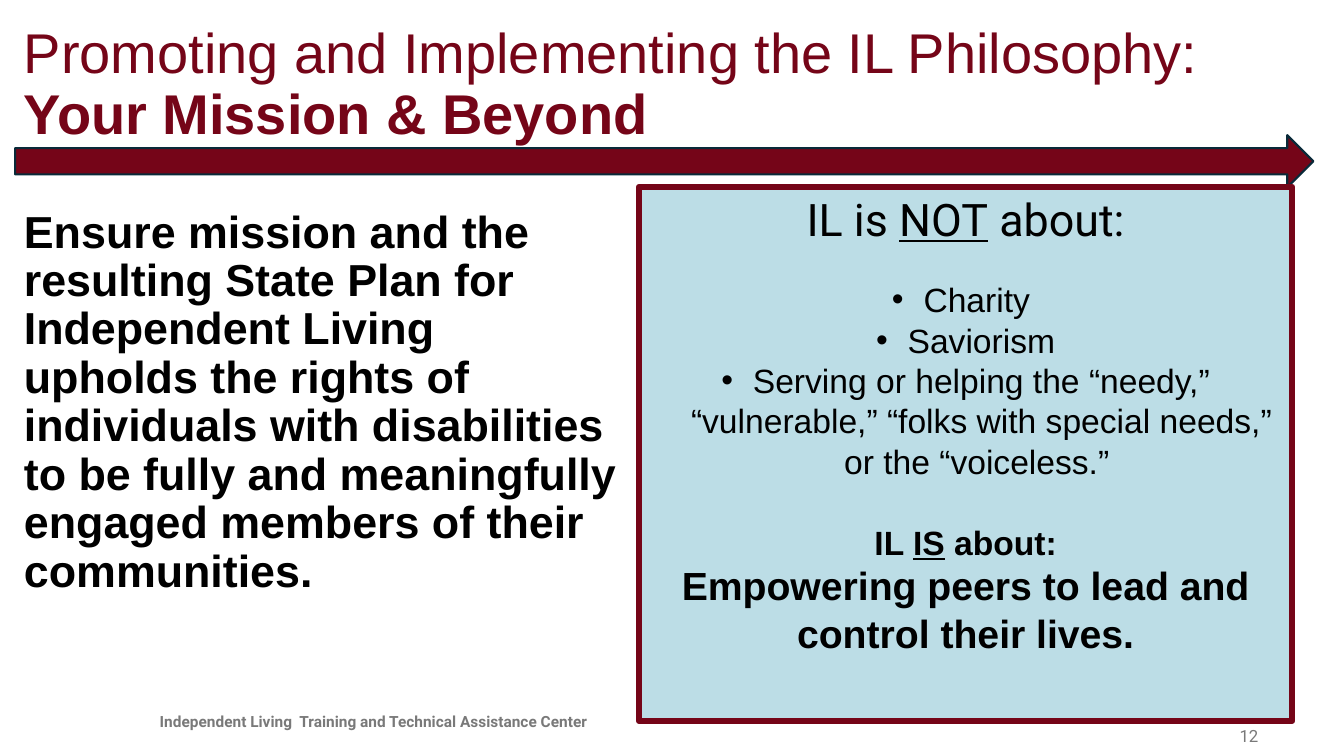
from lxml.etree import SubElement
from pptx import Presentation
from pptx.dml.color import RGBColor
from pptx.enum.shapes import MSO_SHAPE
from pptx.enum.text import MSO_ANCHOR, PP_ALIGN
from pptx.oxml.ns import qn
from pptx.util import Pt

COLORS = {
    "maroon": "750518",
    "navy": "092A39",
    "sky": "BCDDE6",
    "gray": "797979",
    "black": "000000",
}


def rgb(name):
    return RGBColor.from_string(COLORS[name])


def add_run(p, text, size=24, font="Arial", color="black", bold=False, underline=False):
    r = p.add_run()
    r.text = text
    r.font.size = Pt(size)
    r.font.name = font
    r.font.color.rgb = rgb(color)
    r.font.bold = bold
    r.font.underline = underline


class SlideBuilder:
    def __init__(self, prs):
        self.s = prs.slides.add_slide(prs.slide_layouts[6])

    def text_box(self, x, y, w, h, anchor=MSO_ANCHOR.TOP):
        tf = self.s.shapes.add_textbox(Pt(x), Pt(y), Pt(w), Pt(h)).text_frame
        tf.word_wrap = True
        tf.vertical_anchor = anchor
        return tf

    def shape(self, kind, x, y, w, h, fill, line, line_width):
        sp = self.s.shapes.add_shape(kind, Pt(x), Pt(y), Pt(w), Pt(h))
        sp.shadow.inherit = False
        sp.fill.solid()
        sp.fill.fore_color.rgb = rgb(fill)
        sp.line.color.rgb = rgb(line)
        sp.line.width = Pt(line_width)
        tf = sp.text_frame
        tf.word_wrap = True
        tf.vertical_anchor = MSO_ANCHOR.TOP
        return tf

    def paragraph(self, tf, runs, align=PP_ALIGN.LEFT, spacing=None,
                  before=0, after=0, bullet=False, **fmt):
        """Each run is (text, overrides); fmt applies to all of them."""
        p = tf.paragraphs[0]
        if p.runs:
            p = tf.add_paragraph()
        p.alignment = align
        p.line_spacing = spacing
        p.space_before = Pt(before)
        p.space_after = Pt(after)
        if bullet:
            pPr = p._p.get_or_add_pPr()
            pPr.set("marL", str(Pt(22.5)))
            pPr.set("indent", str(Pt(-22.5)))
            SubElement(pPr, qn("a:buFont")).set("typeface", "Arial")
            SubElement(pPr, qn("a:buChar")).set("char", "•")
        for text, extra in runs:
            if text == "\n":
                p.add_line_break()
            else:
                add_run(p, text, **{**fmt, **extra})


def main():
    prs = Presentation()
    prs.slide_width, prs.slide_height = Pt(960), Pt(540)
    b = SlideBuilder(prs)
    center = PP_ALIGN.CENTER
    underlined = {"underline": True}

    # Slide number
    tf = b.text_box(690, 511, 216, 29, MSO_ANCHOR.MIDDLE)
    b.paragraph(tf, [("12", {})], PP_ALIGN.RIGHT, after=6,
                size=12, font="Roboto", color="gray")

    # Title and arrow
    tf = b.text_box(10, 1.5, 950, 106.5, MSO_ANCHOR.BOTTOM)
    b.paragraph(tf, [("Promoting and Implementing the IL Philosophy:", {}), ("\n", {}),
                     ("Your Mission & Beyond", {"bold": True})],
                spacing=0.9, size=40, color="maroon")
    b.shape(MSO_SHAPE.RIGHT_ARROW, 10.8, 96.5, 927.4, 37.4, "maroon", "navy", 1.5)

    # Mission statement
    tf = b.text_box(10, 146, 438, 281)
    b.paragraph(tf, [("Ensure mission and the resulting State Plan for Independent Living "
                      "upholds the rights of individuals with disabilities to be fully and "
                      "meaningfully engaged members of their communities.", {})],
                spacing=0.9, before=10, size=32, bold=True)

    # Panel: what IL is not, and what it is
    tf = b.shape(MSO_SHAPE.RECTANGLE, 456.5, 133.5, 466.5, 381.5, "sky", "maroon", 4.5)
    b.paragraph(tf, [("IL is ", {}), ("NOT", underlined), (" about:", {})], center,
                after=24, size=32, font="Roboto")
    for item in ("Charity ", "Saviorism",
                 "Serving or helping the “needy,” “vulnerable,” “folks with special needs,” "
                 "or the “voiceless.” "):
        b.paragraph(tf, [(item, {})], center, bullet=True)
    b.paragraph(tf, [("IL ", {}), ("IS", underlined), (" about:", {})], center,
                before=29, bold=True)
    b.paragraph(tf, [("Empowering peers to lead and control their lives.", {})], center,
                size=28, bold=True)

    # Footer
    tf = b.text_box(105, 500.5, 324, 29, MSO_ANCHOR.MIDDLE)
    b.paragraph(tf, [("Independent Living  Training and Technical Assistance Center", {})],
                center, after=6, size=11, font="Roboto", color="gray", bold=True)

    prs.save("out.pptx")


if __name__ == "__main__":
    main()
